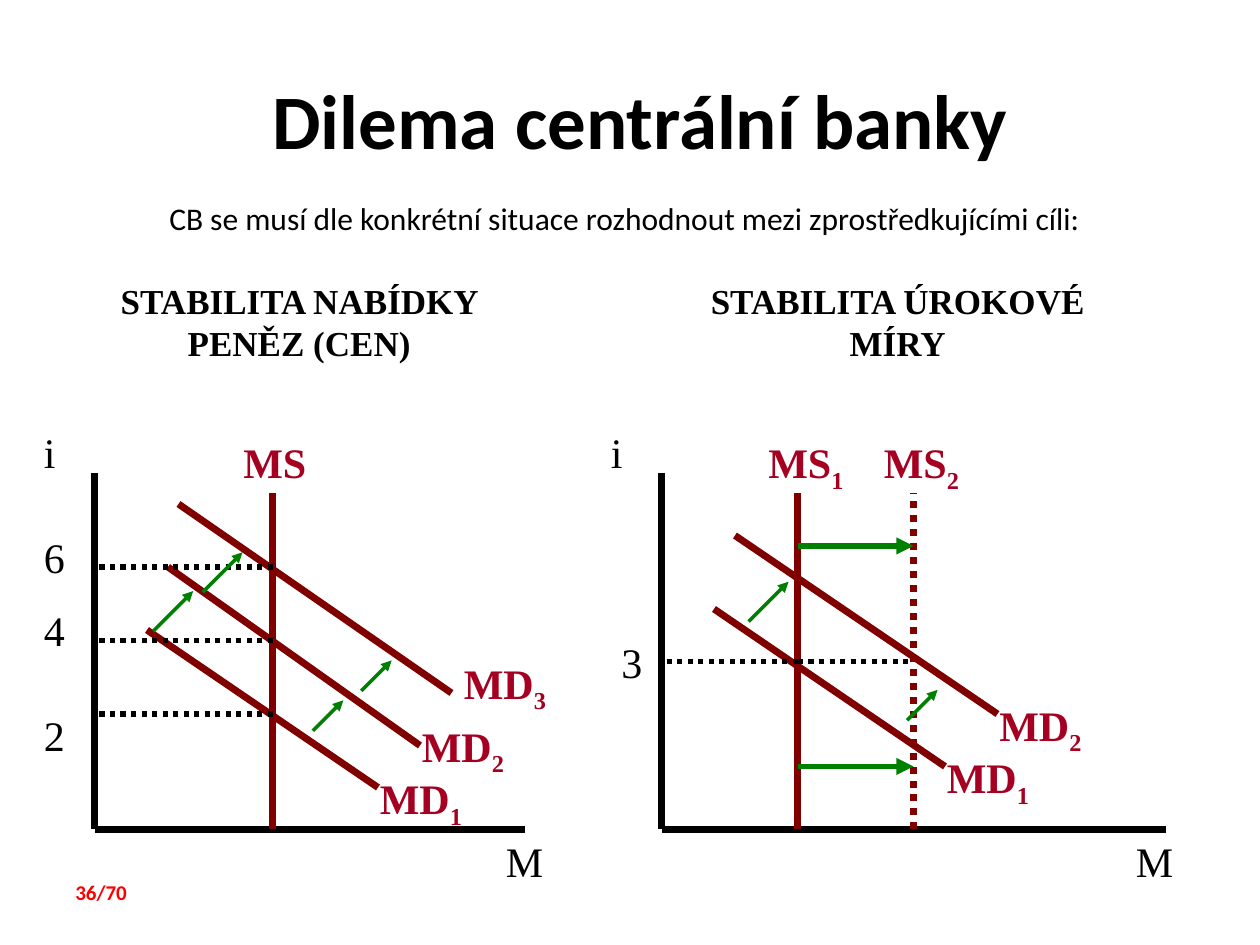
"""Build the slide on the central bank's dilemma with two money market diagrams."""
from lxml import etree
from pptx import Presentation
from pptx.dml.color import RGBColor
from pptx.enum.dml import MSO_LINE
from pptx.enum.shapes import MSO_CONNECTOR
from pptx.enum.text import MSO_ANCHOR, MSO_AUTO_SIZE, PP_ALIGN
from pptx.oxml.ns import qn
from pptx.util import Inches, Pt

STRAIGHT = MSO_CONNECTOR.STRAIGHT
DOTTED = MSO_LINE.ROUND_DOT
CENTER, LEFT = PP_ALIGN.CENTER, PP_ALIGN.LEFT
MIDDLE, TOP = MSO_ANCHOR.MIDDLE, MSO_ANCHOR.TOP
GROW, FIXED = MSO_AUTO_SIZE.SHAPE_TO_FIT_TEXT, MSO_AUTO_SIZE.NONE

COLORS = {"ink": "000000", "curve": "800000", "name": "A50021",
          "shift": "008000", "page": "FF0000"}
SANS, SERIF = "Calibri", "Times New Roman"
COLUMNS, ROWS = 120, 90
SUPPLY_TOP, AXIS_TOP, BASE = 47, 45, 79
LABEL_WIDTH, LABEL_HEIGHT = 11, 6

TITLE = "Dilema centrální banky"
SUBTITLE = "CB se musí dle konkrétní situace rozhodnout mezi zprostředkujícími cíli:"
PAGE = "36/70"
PANELS = [
    {
        "heading": ("STABILITA NABÍDKY PENĚZ (CEN)", 5),
        "axis": (9, 50),
        "axis_names": [("i", 3, 40), ("M", 47, 79)],
        "supply": [("MS", "", 26, 22, None)],
        "demand": [("1", (14, 60, 36, 75), (35, 73)),
                   ("2", (16, 54, 40, 71), (39, 68)),
                   ("3", (17, 48, 43, 66), (43, 62))],
        "rates": [("2", 68, (3, 67)), ("4", 61, (3, 57)), ("6", 54, (3, 50))],
        "guide_stops": [26, 9],
        "supply_shifts": [],
        "demand_shifts": [(29.8, 69.6, 2.9), (14.6, 60.1, 3.8),
                          (34.4, 65.8, 2.9), (19.3, 56.4, 3.8)],
    },
    {
        "heading": ("STABILITA ÚROKOVÉ MÍRY", 62),
        "axis": (63, 111),
        "axis_names": [("i", 57, 40), ("M", 107, 79)],
        "supply": [("MS", "1", 76, 72, None), ("MS", "2", 87, 83, DOTTED)],
        "demand": [("1", (68, 58, 90, 73), (89, 71)),
                   ("2", (70, 51, 95, 68), (94, 66))],
        "rates": [("3", 63, (58, 60))],
        "guide_stops": [76, 63, 87],
        "supply_shifts": [52, 73],
        "demand_shifts": [(86.4, 68.6, 2.9), (71.3, 59.2, 3.8)],
    },
]

prs = Presentation()
prs.slide_width, prs.slide_height = Inches(10), Inches(7.5)
slide = prs.slides.add_slide(prs.slide_layouts[6])


def across(columns):
    return round(prs.slide_width * columns / COLUMNS)


def down(rows):
    return round(prs.slide_height * rows / ROWS)


def add_line(x1, y1, x2, y2, color, width, dash=None, arrow=False):
    line = slide.shapes.add_connector(STRAIGHT, across(x1), down(y1), across(x2), down(y2))
    line.line.color.rgb = RGBColor.from_string(COLORS[color])
    line.line.width = Pt(width)
    if dash:
        line.line.dash_style = dash
    if arrow:
        etree.SubElement(line.line._get_or_add_ln(), qn("a:tailEnd"), type="triangle")
    etree.SubElement(line._element.spPr, qn("a:effectLst"))


def add_text(words, x, y, width, height, size=24, font=SERIF, color="ink",
             bold=False, align=LEFT, anchor=TOP, fit=GROW, subscript=""):
    box = slide.shapes.add_textbox(across(x), down(y), across(width), down(height))
    frame = box.text_frame
    frame.word_wrap = True
    frame.auto_size = fit
    frame.vertical_anchor = anchor
    paragraph = frame.paragraphs[0]
    paragraph.alignment = align
    for part in filter(None, (words, subscript)):
        run = paragraph.add_run()
        run.text = part
        run.font.size = Pt(size)
        run.font.name = font
        run.font.bold = bold
        run.font.color.rgb = RGBColor.from_string(COLORS[color])
    if subscript:
        run._r.get_or_add_rPr().set("baseline", "-25000")


def add_name(words, subscript, x, y):
    add_text(words, x, y, LABEL_WIDTH, LABEL_HEIGHT, color="name", bold=True,
             subscript=subscript)


def add_panel(panel):
    heading, heading_x = panel["heading"]
    add_text(heading, heading_x, 26, 47, 9.3, size=20, bold=True, align=CENTER)

    origin, axis_end = panel["axis"]
    add_line(origin, AXIS_TOP, origin, BASE, "ink", 3.5)
    add_line(origin, BASE, axis_end, BASE, "ink", 3.5)
    for words, x, y in panel["axis_names"]:
        add_text(words, x, y, LABEL_WIDTH, LABEL_HEIGHT)

    for words, index, x, name_x, dash in panel["supply"]:
        add_line(x, BASE, x, SUPPLY_TOP, "curve", 4, dash)
        add_name(words, index, name_x, 41)
    for index, ends, name_at in panel["demand"]:
        add_line(*ends, "curve", 4)
        add_name("MD", index, *name_at)

    start, *stops = panel["guide_stops"]
    for rate, y, rate_at in panel["rates"]:
        for stop in stops:
            add_line(start, y, stop, y, "ink", 3, DOTTED)
        add_text(rate, *rate_at, 6, LABEL_HEIGHT)

    for y in panel["supply_shifts"]:
        before, after = (curve[2] for curve in panel["supply"])
        add_line(before, y, after, y, "shift", 3.25, arrow=True)
    for x, y, step in panel["demand_shifts"]:
        add_line(x, y, x + step, y - step, "shift", 2, arrow=True)


add_text(TITLE, 1, 3.8, 120, 15, size=44, font=SANS, bold=True,
         align=CENTER, anchor=MIDDLE, fit=FIXED)
for panel in PANELS:
    add_panel(panel)
add_text(SUBTITLE, 3, 18.4, 113, 4.8, size=18, font=SANS, align=CENTER)
add_text(PAGE, 6, 83.2, 11, 3.6, size=12, font=SANS, color="page", bold=True)

prs.save("out.pptx")
